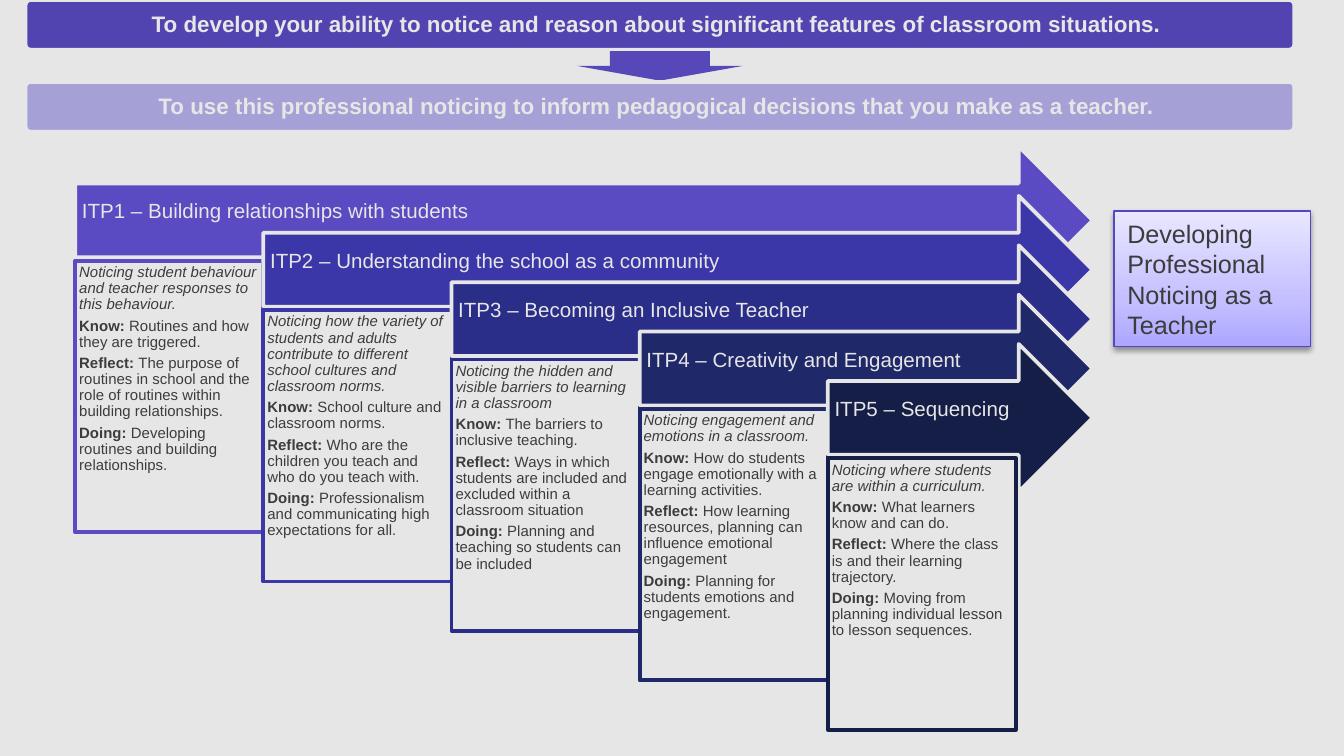
import pptx
import pptx.util
import pptx.dml.color
import pptx.enum.shapes
import pptx.enum.text
import pptx.oxml.ns
import lxml.etree

# Content
AIMS = [
    ("To develop your ability to notice and reason about significant features of classroom situations. ", "5244B0"),
    ("To use this professional noticing to inform pedagogical decisions that you make as a teacher. ", "A5A1D7"),
]
LABELS = ("Know: ", "Reflect: ", "Doing: ")
STEPS = [
    ("ITP1 – Building relationships with students", "5A4BC2",
     "Noticing student behaviour and teacher responses to this behaviour.",
     ("Routines and how they are triggered.",
      "The purpose of routines in school and the role of routines within building relationships.",
      "Developing routines and building relationships.")),
    ("ITP2 – Understanding the school as a community", "3C37A9",
     "Noticing how the variety of students and adults contribute to different school cultures and classroom norms.",
     ("School culture and classroom norms.",
      "Who are the children you teach and who do you teach with.",
      "Professionalism and communicating high expectations for all.")),
    ("ITP3 – Becoming an Inclusive Teacher", "2B2E89",
     "Noticing the hidden and visible barriers to learning in a classroom",
     ("The barriers to inclusive teaching.",
      "Ways in which students are included and excluded within a classroom situation",
      "Planning and teaching so students can be included")),
    ("ITP4 – Creativity and Engagement", "1F2868",
     "Noticing engagement and emotions in a classroom.",
     ("How do students engage emotionally with a learning activities.",
      "How learning resources, planning can influence emotional engagement",
      "Planning for students emotions and engagement.")),
    ("ITP5 – Sequencing", "141E46",
     "Noticing where students are within a curriculum.",
     ("What learners know and can do.",
      "Where the class is and their learning trajectory.",
      "Moving from planning individual lesson to lesson sequences.")),
]
GOAL = "Developing Professional Noticing as a Teacher"
BLEND = [(0, "ACA6FF"), (35, "C4C0FF"), (100, "E8E7FF")]
PALE, DARK = "E6E6E6", "3C3C3C"

# Grid, in inches
WIDTH = 10
HEIGHT = WIDTH * 9 / 16
LEFT, TOP, LAST, COL = 0.56, 1.09, 2.56, 1.4
ROW = (LAST - TOP) / (len(STEPS) - 1)
TIP, HEAD, DROP, CARD = 8.13, 1.1, 0.85, 2.02
AIM_X, AIM_W, AIM_H, AIM_STEP = 0.19, 9.44, 0.37, 0.61

KIND = pptx.enum.shapes.MSO_SHAPE
ALIGN = pptx.enum.text.PP_ALIGN
ANCHOR = pptx.enum.text.MSO_ANCHOR
Inches, Pt = pptx.util.Inches, pptx.util.Pt
qn = pptx.oxml.ns.qn

deck = pptx.Presentation()
deck.slide_width, deck.slide_height = Inches(WIDTH), Inches(HEIGHT)
slide = deck.slides.add_slide(deck.slide_layouts[6])


def tint(code):
    return pptx.dml.color.RGBColor.from_string(code)


def paint(fill, code):
    fill.solid()
    fill.fore_color.rgb = tint(code)


def add(kind, box, fill, line=None, width=2, adj=()):
    shape = slide.shapes.add_shape(kind, *map(Inches, box))
    shape.shadow.inherit = False
    paint(shape.fill, fill)
    if line:
        paint(shape.line.fill, line)
        shape.line.width = Pt(width)
    else:
        shape.line.fill.background()
    for i, share in enumerate(adj):
        shape.adjustments[i] = share
    return shape


def write(shape, paras, size, code, pads, anchor=ANCHOR.MIDDLE,
          align=ALIGN.LEFT, lead=0.9, after=0.35):
    """Each paragraph is a list of (text, font values) runs."""
    frame = shape.text_frame
    look = {"word_wrap": True, "vertical_anchor": anchor}
    sides = ("margin_left", "margin_top", "margin_right", "margin_bottom")
    look.update(zip(sides, map(Inches, pads)))
    for key, value in look.items():
        setattr(frame, key, value)
    for i, runs in enumerate(paras):
        para = frame.add_paragraph() if i else frame.paragraphs[0]
        form = {"alignment": align, "line_spacing": lead, "space_after": Pt(size * after)}
        for key, value in form.items():
            setattr(para, key, value)
        for text, style in runs:
            run = para.add_run()
            run.text = text
            run.font.color.rgb = tint(code)
            for key, value in {"name": "Arial", "size": Pt(size), **style}.items():
                setattr(run.font, key, value)


# Background
paint(slide.background.fill, PALE)

# Staircase of arrows and cards
for i, (title, code, focus, notes) in enumerate(STEPS):
    x, y = LEFT + i * COL, TOP + i * ROW
    arrow = add(KIND.RIGHT_ARROW, (x, y, TIP - x, HEAD), code, PALE, adj=(0.5, 0.5))
    write(arrow, [[(title, {})]], 11, PALE, (0.05, 0.05, 0.28, 0.17))
    card = add(KIND.RECTANGLE, (x, y + DROP, COL, CARD), PALE, code)
    paras = [[(focus, {"italic": True})]]
    paras += [[(label, {"bold": True}), (note, {})] for label, note in zip(LABELS, notes)]
    write(card, paras, 8, DARK, (0.03,) * 4, anchor=ANCHOR.TOP)

# Two aims joined by a block arrow
for i, (aim, code) in enumerate(AIMS):
    box = (AIM_X, i * AIM_STEP, AIM_W, AIM_H)
    bar = add(KIND.ROUNDED_RECTANGLE, box, code, PALE, adj=(0.1,))
    write(bar, [[(aim, {"bold": True})]], 12, PALE, (0.05,) * 4, align=ALIGN.CENTER)
    if i == 0:
        down = add(KIND.RIGHT_ARROW, (4.8, -0.13, 0.22, 1.24), "5648B9", adj=(0.6, 0.5))
        down.rotation = 90

# Goal box with gradient and soft shadow
goal = add(KIND.RECTANGLE, (8.29, 1.57, 1.46, 1.01), BLEND[0][1], "5646C1", 0.75)
write(goal, [[(GOAL, {})]], 13.5, DARK, (0.1, 0.05, 0.1, 0.05), lead=1.0, after=0)
goal.fill.gradient()
goal.fill.gradient_angle = 90
props = goal._element.spPr


def child(node, tag, **values):
    return lxml.etree.SubElement(node, qn(tag), values)


stops = props.find(".//" + qn("a:gsLst"))
for stop in list(stops):
    stops.remove(stop)
for share, code in BLEND:
    child(child(stops, "a:gs", pos=str(share * 1000)), "a:srgbClr", val=code)
shade = child(props.find(qn("a:effectLst")), "a:outerShdw", blurRad="40000",
              dist="20000", dir="5400000", rotWithShape="0")
child(child(shade, "a:srgbClr", val="000000"), "a:alpha", val="38000")

deck.save("out.pptx")
